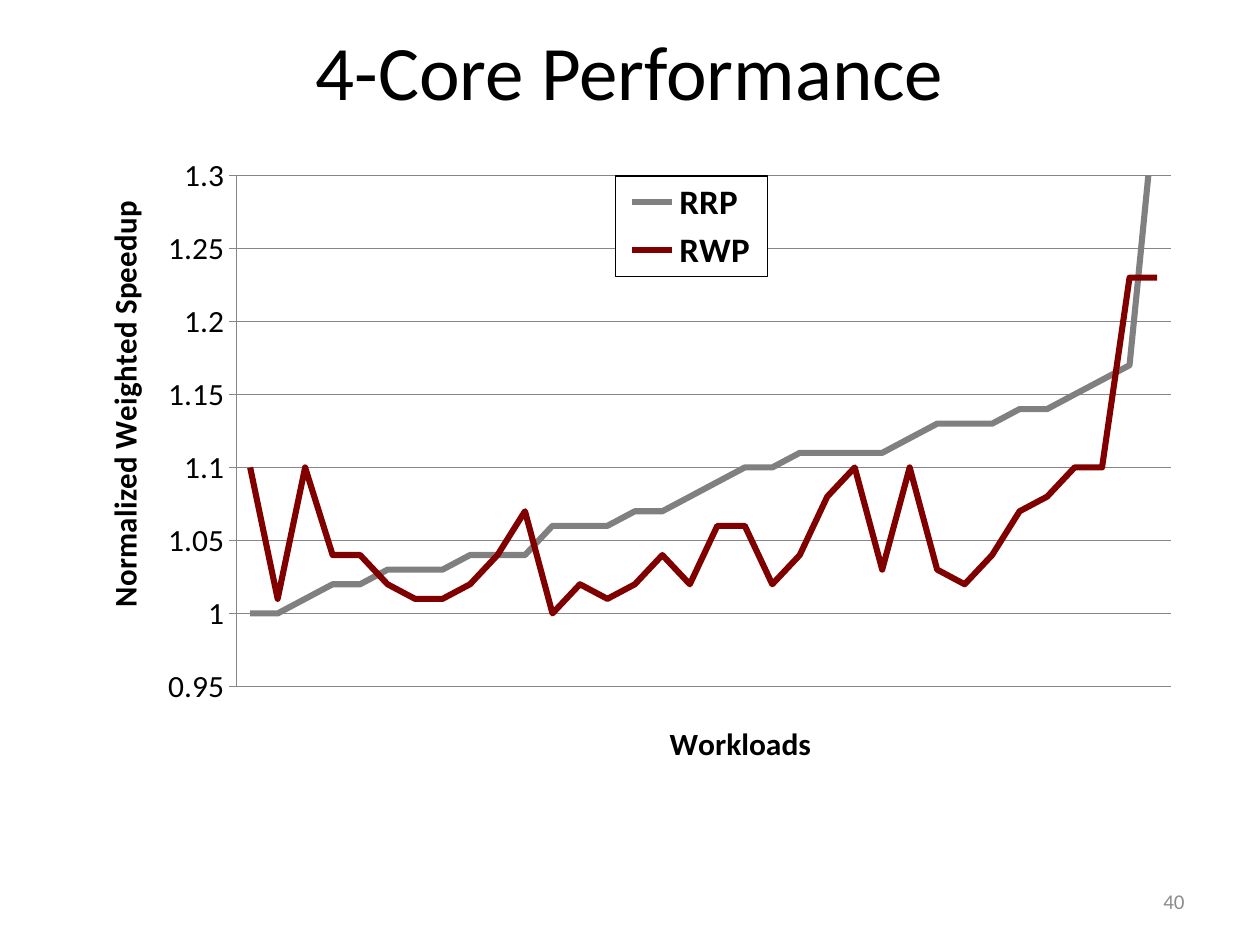
from lxml import etree
from pptx import Presentation
from pptx.chart.data import CategoryChartData
from pptx.dml.color import RGBColor
from pptx.enum.chart import XL_CHART_TYPE, XL_LEGEND_POSITION, XL_MARKER_STYLE, XL_TICK_LABEL_POSITION, XL_TICK_MARK
from pptx.enum.text import MSO_ANCHOR, PP_ALIGN
from pptx.oxml import parse_xml
from pptx.oxml.ns import nsdecls, qn
from pptx.util import Inches, Pt

LINE_CHART = XL_CHART_TYPE.LINE
LEGEND_RIGHT = XL_LEGEND_POSITION.RIGHT
NO_MARKER = XL_MARKER_STYLE.NONE
NO_LABELS = XL_TICK_LABEL_POSITION.NONE
TICK_NONE = XL_TICK_MARK.NONE
TICK_OUTSIDE = XL_TICK_MARK.OUTSIDE
MIDDLE = MSO_ANCHOR.MIDDLE
CENTER = PP_ALIGN.CENTER
RIGHT = PP_ALIGN.RIGHT

FONT = "Calibri"
BLACK = "000000"
GRID_GRAY = "868686"
SPEEDUPS = {
    "RRP": ("808080", [
        1, 1, 1.01, 1.02, 1.02, 1.03, 1.03, 1.03, 1.04, 1.04, 1.04, 1.06,
        1.06, 1.06, 1.07, 1.07, 1.08, 1.09, 1.1, 1.1, 1.11, 1.11, 1.11, 1.11,
        1.12, 1.13, 1.13, 1.13, 1.14, 1.14, 1.15, 1.16, 1.17, 1.36]),
    "RWP": ("800000", [
        1.1, 1.01, 1.1, 1.04, 1.04, 1.02, 1.01, 1.01, 1.02, 1.04, 1.07, 1,
        1.02, 1.01, 1.02, 1.04, 1.02, 1.06, 1.06, 1.02, 1.04, 1.08, 1.1, 1.03,
        1.1, 1.03, 1.02, 1.04, 1.07, 1.08, 1.1, 1.1, 1.23, 1.23]),
}


def color(hex_string):
    return RGBColor.from_string(hex_string)


def style_font(font, size, hex_string=BLACK, bold=False):
    font.name = FONT
    font.size = Pt(size)
    font.bold = bold
    font.color.rgb = color(hex_string)


def style_line(line, hex_string, width=0.75):
    line.color.rgb = color(hex_string)
    line.width = Pt(width)


def add_text(slide, text, left, top, width, height, size, hex_string, alignment):
    shape = slide.shapes.add_textbox(Inches(left), Inches(top), Inches(width), Inches(height))
    text_frame = shape.text_frame
    text_frame.word_wrap = True
    text_frame.vertical_anchor = MIDDLE
    text_frame.text = text
    paragraph = text_frame.paragraphs[0]
    paragraph.alignment = alignment
    style_font(paragraph.runs[0].font, size, hex_string)


def set_layout(element, index, inner=False, **fractions):
    for old_layout in element.findall(qn("c:layout")):
        element.remove(old_layout)
    layout = parse_xml(f"<c:layout {nsdecls('c')}><c:manualLayout/></c:layout>")
    settings = {"layoutTarget": "inner"} if inner else {}
    settings.update(xMode="edge", yMode="edge", **fractions)
    for name, value in settings.items():
        etree.SubElement(layout[0], qn(f"c:{name}")).set("val", str(value))
    element.insert(index, layout)


def add_axis_title(axis, text, x, y):
    text_frame = axis.axis_title.text_frame
    text_frame.text = text
    style_font(text_frame.paragraphs[0].runs[0].font, 18, bold=True)
    set_layout(axis.axis_title._element, 1, x=x, y=y)


def style_axes(chart):
    category_axis = chart.category_axis
    category_axis.tick_label_position = NO_LABELS
    category_axis.major_tick_mark = TICK_NONE
    style_line(category_axis.format.line, GRID_GRAY)
    add_axis_title(category_axis, "Workloads", 0.53, 0.93)

    value_axis = chart.value_axis
    value_axis.minimum_scale = 0.95
    value_axis.maximum_scale = 1.3
    value_axis.major_unit = 0.05
    value_axis.major_tick_mark = TICK_OUTSIDE
    value_axis.has_major_gridlines = True
    style_line(value_axis.major_gridlines.format.line, GRID_GRAY)
    style_line(value_axis.format.line, GRID_GRAY)
    add_axis_title(value_axis, "Normalized Weighted Speedup", 0.03, 0.09)


def add_legend(chart):
    chart.has_legend = True
    legend = chart.legend
    legend.position = LEGEND_RIGHT
    legend.include_in_layout = False
    style_font(legend.font, 20, bold=True)
    element = legend._element
    box = parse_xml(
        f"<c:spPr {nsdecls('c', 'a')}>"
        '<a:solidFill><a:srgbClr val="FFFFFF"/></a:solidFill>'
        '<a:ln w="9525"><a:solidFill><a:srgbClr val="000000"/></a:solidFill></a:ln>'
        "</c:spPr>")
    element.find(qn("c:txPr")).addprevious(box)
    set_layout(element, 1, x=0.487, y=0.045, w=0.134, h=0.164)


def add_speedup_chart(slide):
    chart_data = CategoryChartData()
    chart_data.categories = [str(number) for number in range(1, 35)]
    for name, (_, values) in SPEEDUPS.items():
        chart_data.add_series(name, values)
    frame = slide.shapes.add_chart(
        LINE_CHART, Inches(0.5), Inches(1.18), Inches(9), Inches(4.95), chart_data)
    chart = frame.chart
    chart.has_title = False
    style_font(chart.font, 18)
    chart.plots[0].vary_by_categories = False
    for series in chart.plots[0].series:
        series.smooth = False
        series.marker.style = NO_MARKER
        style_line(series.format.line, SPEEDUPS[series.name][0], 3.5)
    style_axes(chart)
    add_legend(chart)
    plot_area = chart._chartSpace.find(f".//{qn('c:plotArea')}")
    set_layout(plot_area, 0, inner=True, x=0.153, y=0.044, w=0.824, h=0.837)


def main():
    presentation = Presentation()
    presentation.slide_width = Inches(10)
    presentation.slide_height = Inches(7.5)
    slide = presentation.slides.add_slide(presentation.slide_layouts[6])
    add_text(slide, "4-Core Performance", 0.5, -0.07, 9, 1.25, 44, BLACK, CENTER)
    add_speedup_chart(slide)
    add_text(slide, "40", 7.17, 6.95, 2.33, 0.4, 12, "8C8C8C", RIGHT)
    presentation.save("out.pptx")


if __name__ == "__main__":
    main()
